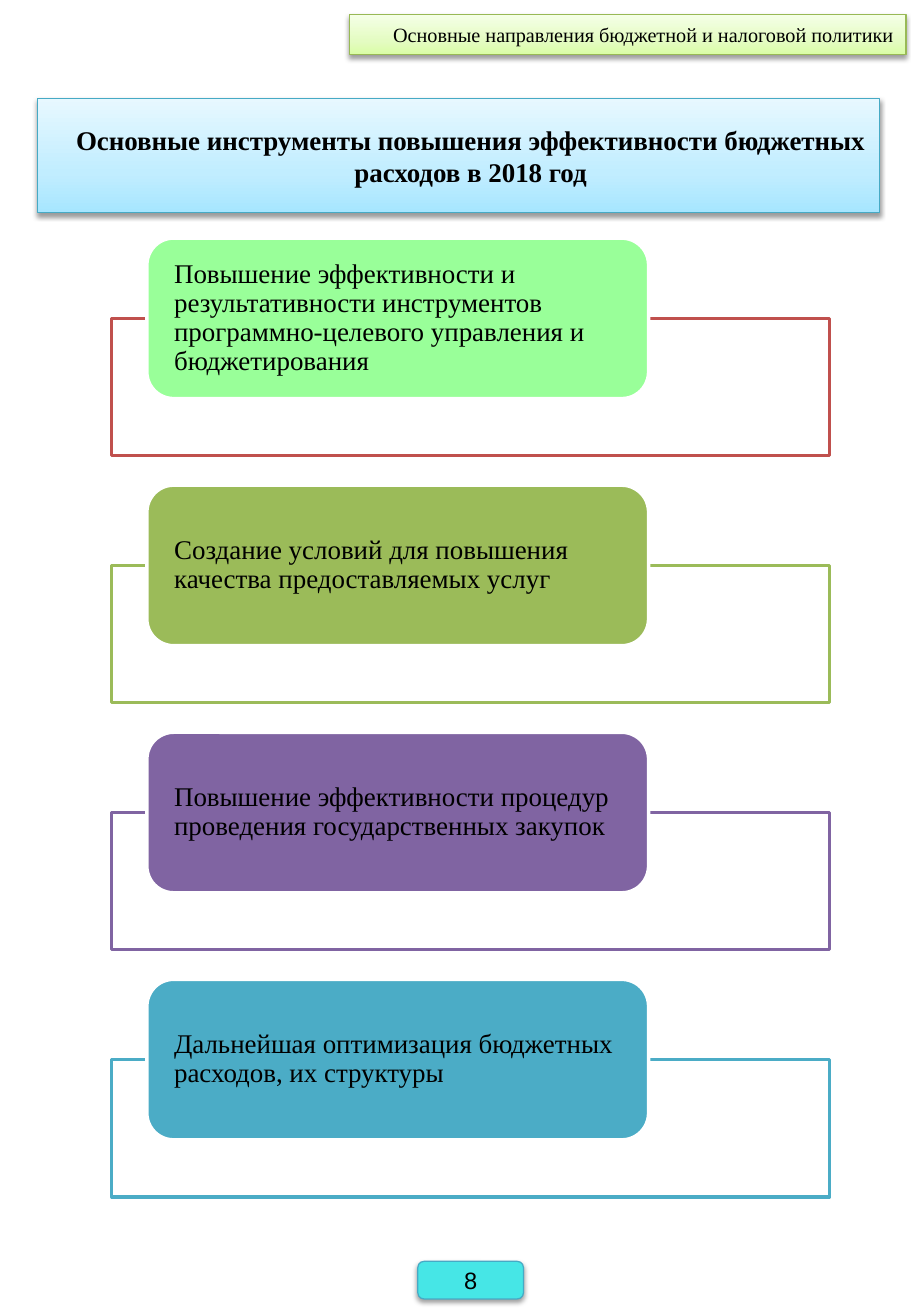
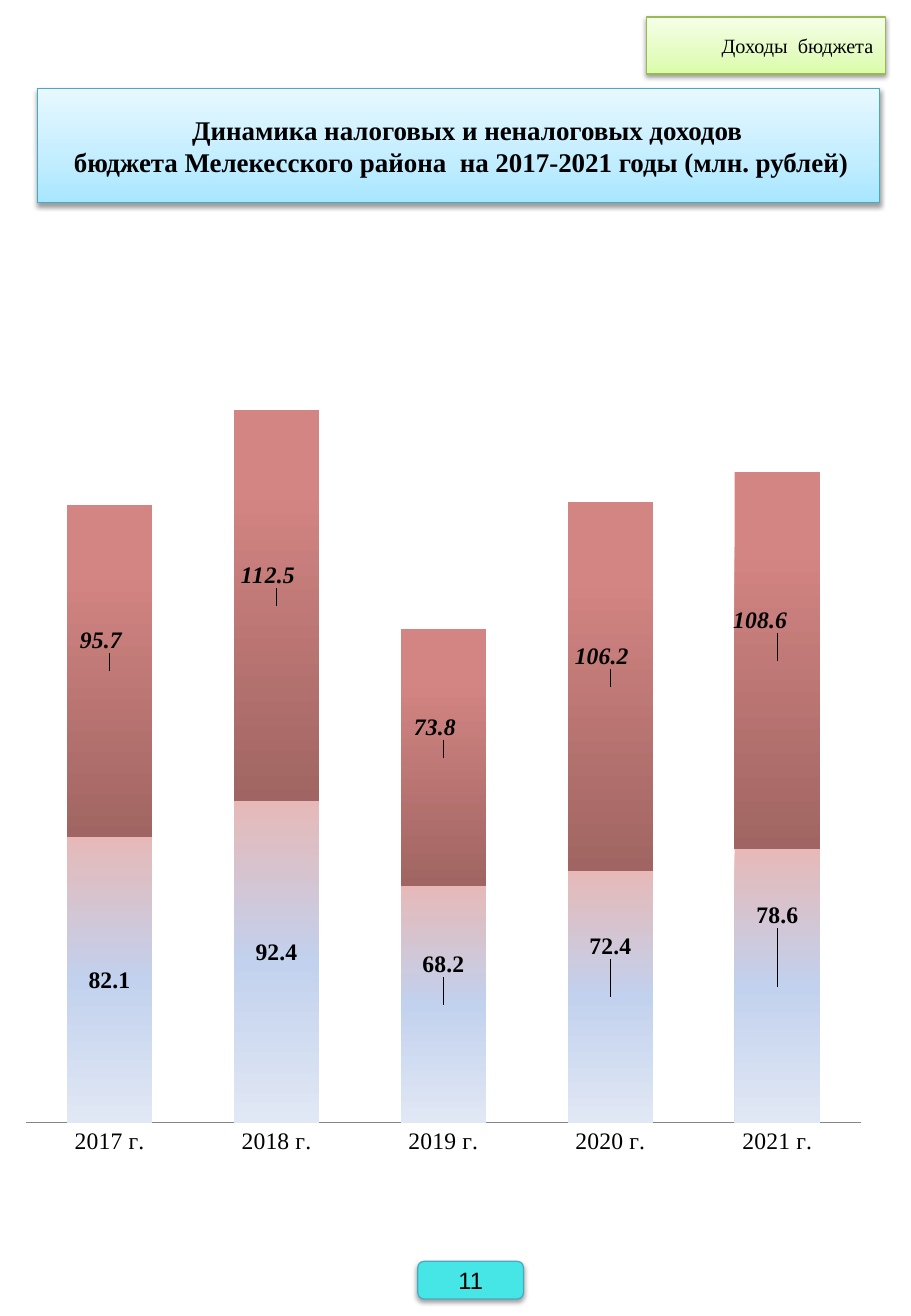
from dataclasses import dataclass

from lxml.etree import SubElement
from pptx import Presentation
from pptx.chart.data import CategoryChartData
from pptx.dml.color import RGBColor
from pptx.enum.chart import XL_CHART_TYPE as Chart, XL_LABEL_POSITION as LabelPos, XL_TICK_MARK as Tick
from pptx.enum.shapes import MSO_SHAPE as Shape
from pptx.enum.text import MSO_ANCHOR as Anchor, PP_ALIGN as Align
from pptx.oxml.ns import qn
from pptx.util import Inches, Pt


@dataclass(frozen=True)
class Theme:
    serif: str = "Times New Roman"
    sans: str = "Arial"
    ink: str = "000000"
    paper: str = "FFFFFF"
    axis: str = "868686"
    title_fill: tuple = ((0, "A7E6FF"), (35, "C1EDFF"), (100, "E7F8FF"))
    title_line: str = "46AAC5"
    section_fill: tuple = ((0, "DAFDA7"), (35, "E4FCC2"), (100, "F5FFE7"))
    section_line: str = "98B955"
    page_fill: str = "46E6E6"
    lower_fill: tuple = ((0, "E6B9B8"), (50, "C2D1ED"), (100, "E1E8F5"))
    upper_fill: tuple = ((0, "D38583"), (20, "D38583"), (100, "A06562"))
    section_size: int = 12
    label_size: int = 14
    body_size: int = 16
    thin: float = 0.75
    thick: float = 2


THEME = Theme()

# Section tag, its box and left indent, title top and lines, page number
TOOLS = dict(
    section="Основные направления бюджетной и налоговой политики",
    section_box=(2.88, 0.12, 4.58, 0.33), section_indent=0.04,
    title_top=0.81,
    title=[("Основные инструменты повышения эффективности бюджетных расходов в 2018 год", Align.CENTER)],
    page="8",
)
REVENUE = dict(
    section="Доходы  бюджета",
    section_box=(5.32, 0.14, 1.97, 0.47), section_indent=0.12,
    title_top=0.73,
    title=[("Динамика налоговых и неналоговых доходов ", Align.CENTER),
           ("бюджета Мелекесского района  на 2017-2021 годы (млн. рублей)", Align.LEFT)],
    page="11",
)

# Text, card fill, frame line
CARDS = [
    ("Повышение эффективности и результативности инструментов программно-целевого "
     "управления и бюджетирования", "99FF99", "C0504D"),
    ("Создание условий для повышения качества предоставляемых услуг", "9BBB59", "9BBB59"),
    ("Повышение эффективности процедур проведения государственных закупок", "8064A2", "8064A2"),
    ("Дальнейшая оптимизация бюджетных расходов, их структуры", "4BACC6", "4BACC6"),
]
FIRST_CARD, LAST_CARD = 1.96, 8.06

YEARS = ["2017 г.", "2018 г.", "2019 г.", "2020 г.", "2021 г."]
# Label shifts are fractions of the chart's width and height
SERIES = [
    dict(name="Series 1", values=(82.1, 92.4, 68.2, 72.4, 78.6), fill=THEME.lower_fill, italic=False,
         shifts=((0, 0), (0, -0.01), (0, -0.04), (0, -0.05), (0, -0.07))),
    dict(name="Series 2", values=(95.7, 112.5, 73.8, 106.2, 108.6), fill=THEME.upper_fill, italic=True,
         shifts=((-0.01, -0.03), (-0.01, -0.03), (-0.01, -0.03), (-0.01, -0.03), (-0.02, -0.04))),
]


def rgb(value):
    return RGBColor.from_string(value)


def assign(target, values):
    for name, value in values.items():
        setattr(target, name, value)


def style_font(font, size, face=THEME.serif, **flags):
    assign(font, dict(name=face, size=Pt(size), **flags))
    font.color.rgb = rgb(THEME.ink)


def paint(fill, owner, colour, angle=90):
    """Fill with one colour, or with (percent, colour) stops; angle is counter-clockwise."""
    if isinstance(colour, str):
        fill.solid()
        fill.fore_color.rgb = rgb(colour)
        return
    fill.gradient()
    fill.gradient_angle = angle
    stops = owner.find(".//" + qn("a:gsLst"))
    for stop in list(stops):
        stops.remove(stop)
    for percent, value in colour:
        stop = SubElement(stops, qn("a:gs"), pos=str(percent * 1000))
        SubElement(stop, qn("a:srgbClr"), val=value)


def add_box(slide, kind, box, colour, line, width, shadow=False):
    shape = slide.shapes.add_shape(kind, *map(Inches, box))
    paint(shape.fill, shape._element, colour)
    shape.line.color.rgb = rgb(line)
    shape.line.width = Pt(width)
    shape.shadow.inherit = False
    if shadow:
        effects = shape._element.spPr.find(qn("a:effectLst"))
        outer = SubElement(effects, qn("a:outerShdw"), blurRad=str(Pt(3.1)), dist=str(Pt(1.6)),
                           dir="5400000", rotWithShape="0")
        black = SubElement(outer, qn("a:srgbClr"), val=THEME.ink)
        SubElement(black, qn("a:alpha"), val="38000")
    return shape


def write(shape, lines, size, indent=0, paragraph_format=None, **font):
    """Write (text, alignment) lines, one paragraph each."""
    frame = shape.text_frame
    assign(frame, dict(word_wrap=True, vertical_anchor=Anchor.MIDDLE))
    for index, (text, align) in enumerate(lines):
        paragraph = frame.add_paragraph() if index else frame.paragraphs[0]
        assign(paragraph, dict(alignment=align, **(paragraph_format or {})))
        if indent:
            paragraph._p.get_or_add_pPr().set("marL", str(Inches(indent)))
        run = paragraph.add_run()
        run.text = text
        style_font(run.font, size, **font)


def add_page(deck, content):
    """Add a slide with its title, section tag and page number."""
    slide = deck.slides.add_slide(deck.slide_layouts[6])
    title = add_box(slide, Shape.RECTANGLE, (0.31, content["title_top"], 6.93, 0.94),
                    THEME.title_fill, THEME.title_line, THEME.thin, shadow=True)
    write(title, content["title"], THEME.body_size, indent=0.2, bold=True)
    section = add_box(slide, Shape.RECTANGLE, content["section_box"],
                      THEME.section_fill, THEME.section_line, THEME.thin, shadow=True)
    write(section, [(content["section"], Align.RIGHT)], THEME.section_size, content["section_indent"])
    page = add_box(slide, Shape.FLOWCHART_ALTERNATE_PROCESS, (3.44, 10.38, 0.87, 0.31),
                   THEME.page_fill, THEME.title_line, THEME.thin, shadow=True)
    write(page, [(content["page"], Align.CENTER)], THEME.label_size, face=THEME.sans)
    return slide


def add_cards(slide):
    height = 1.32
    pitch = (LAST_CARD - FIRST_CARD) / (len(CARDS) - 1)
    for index, (text, colour, frame_line) in enumerate(CARDS):
        top = FIRST_CARD + index * pitch
        add_box(slide, Shape.RECTANGLE, (0.92, top + height / 2, 5.91, 1.13),
                THEME.paper, frame_line, THEME.thick)
        card = add_box(slide, Shape.ROUNDED_RECTANGLE, (1.21, top, 4.13, height),
                       colour, THEME.paper, THEME.thick)
        assign(card.text_frame, dict(margin_left=Inches(0.16), margin_right=Inches(0.16),
                                     margin_top=0, margin_bottom=0))
        write(card, [(text, Align.LEFT)], THEME.body_size, paragraph_format=dict(line_spacing=0.9))


def set_layout(parent, position, **values):
    """Insert a manual chart layout as the given child of parent."""
    for old in parent.findall(qn("c:layout")):
        parent.remove(old)
    layout = parent.makeelement(qn("c:layout"))
    parent.insert(position, layout)
    manual = SubElement(layout, qn("c:manualLayout"))
    for name, value in values.items():
        SubElement(manual, qn(f"c:{name}"), val=str(value))


def add_revenue_chart(slide):
    data = CategoryChartData(number_format="0.0")
    data.categories = YEARS
    for entry in SERIES:
        data.add_series(entry["name"], entry["values"])
    box = map(Inches, (0.21, 1.87, 7.09, 8.31))
    chart = slide.shapes.add_chart(Chart.COLUMN_STACKED, *box, data).chart
    assign(chart, dict(has_legend=False, has_title=False))
    style_font(chart.font, THEME.label_size)
    set_layout(chart._chartSpace.find(".//" + qn("c:plotArea")), 0, layoutTarget="inner",
               xMode="edge", yMode="edge", x=0, y=0.026, w=0.97, h=0.861)

    assign(chart.value_axis, dict(visible=False, has_major_gridlines=False,
                                  minimum_scale=0, maximum_scale=250))
    years = chart.category_axis
    assign(years, dict(major_tick_mark=Tick.NONE, minor_tick_mark=Tick.NONE))
    style_font(years.tick_labels.font, THEME.label_size)
    years.format.line.color.rgb = rgb(THEME.axis)

    plot = chart.plots[0]
    assign(plot, dict(gap_width=95, overlap=100, vary_by_categories=False))
    for series, entry in zip(plot.series, SERIES):
        paint(series.format.fill, series._element, entry["fill"], angle=270)
        label_font = dict(bold=True, italic=entry["italic"])
        labels = series.data_labels
        assign(labels, dict(show_value=True, number_format="0.0", number_format_is_linked=False))
        style_font(labels.font, THEME.label_size, **label_font)
        for index in range(len(YEARS)):
            label = series.points[index].data_label
            label.position = LabelPos.CENTER
            style_font(label.font, THEME.label_size, **label_font)
        for label, (x, y) in zip(series._element.iter(qn("c:dLbl")), entry["shifts"]):
            set_layout(label, 1, x=x, y=y)


def main():
    deck = Presentation()
    assign(deck, dict(slide_width=Inches(7.5), slide_height=Inches(10.83)))
    add_cards(add_page(deck, TOOLS))
    add_revenue_chart(add_page(deck, REVENUE))
    deck.save("out.pptx")


if __name__ == "__main__":
    main()
